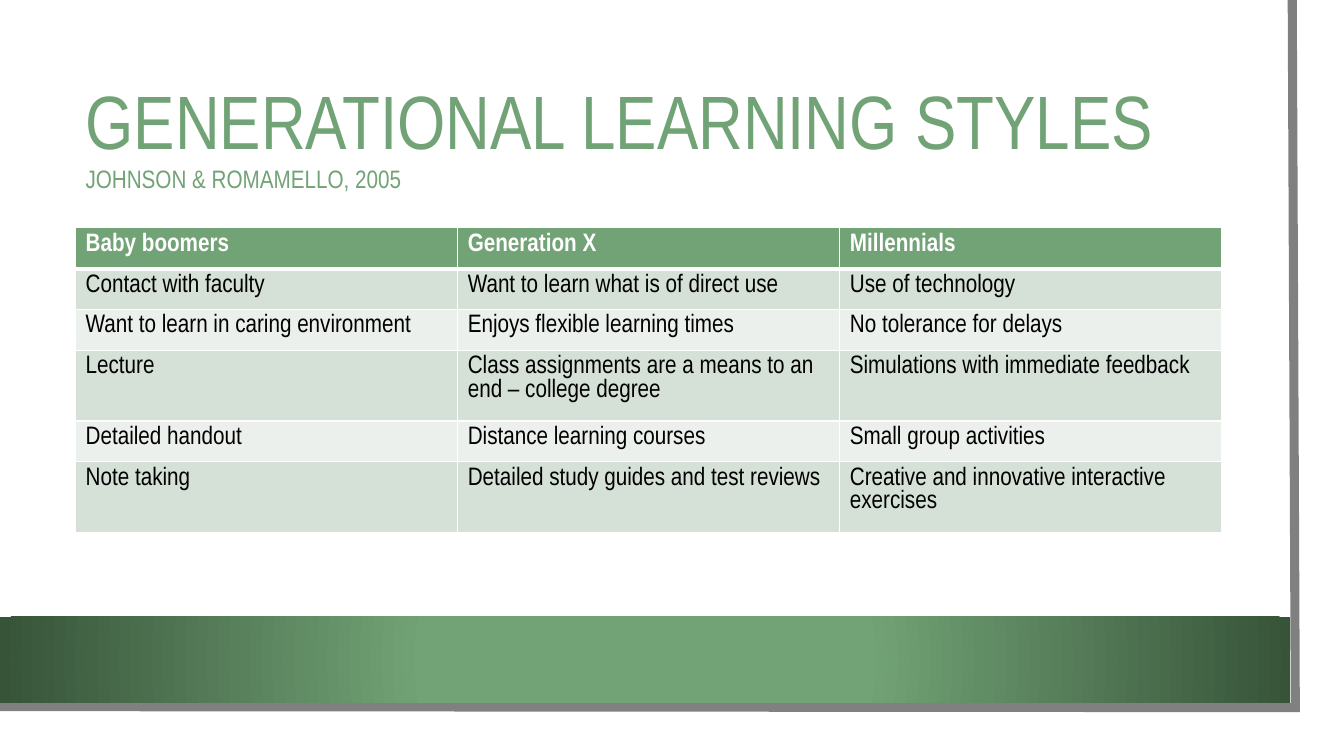
from dataclasses import dataclass

from lxml import etree
from pptx import Presentation
from pptx import util as u
from pptx.dml import color
from pptx.enum import shapes, text
from pptx.oxml import ns, parse_xml

COLUMNS, ROWS = 160, 90


@dataclass(frozen=True)
class Theme:
    font: str = "Arial Narrow"
    green: str = "72A376"
    dark_green: str = "375439"
    odd_row: str = "D5E0D6"
    even_row: str = "EBF0EC"
    frame: str = "808080"
    white: str = "FFFFFF"
    black: str = "000000"
    title_size: float = 54
    body_size: float = 18


def rgb(value):
    return color.RGBColor.from_string(value)


def apply_format(target, values):
    for name, value in values.items():
        setattr(target, name, value)


class SlideBuilder:
    def __init__(self, presentation, theme):
        self.theme = theme
        self.slide = presentation.slides.add_slide(presentation.slide_layouts[6])
        self.column = presentation.slide_width / COLUMNS
        self.row = presentation.slide_height / ROWS

    def place(self, *grid):
        """Turn alternating columns and rows into slide lengths."""
        return [u.Emu(round(value * (self.row if index % 2 else self.column)))
                for index, value in enumerate(grid)]

    def style_font(self, font, size, font_color, bold=False):
        apply_format(font, {"name": self.theme.font, "size": u.Pt(size), "bold": bold})
        font.color.rgb = rgb(font_color)

    def outline(self, points, line_color, width):
        start, *others = [self.place(*point) for point in points]
        builder = self.slide.shapes.build_freeform(*start)
        builder.add_line_segments(others, close=False)
        shape = builder.convert_to_shape()
        shape.shadow.inherit = False
        shape.fill.background()
        shape.line.color.rgb = rgb(line_color)
        shape.line.width = u.Pt(width)
        line = shape.element.spPr.find(ns.qn("a:ln"))
        etree.SubElement(line, ns.qn("a:miter"), lim="800000")

    def glow_band(self, grid, stops):
        shape = self.slide.shapes.add_shape(shapes.MSO_SHAPE.RECTANGLE, *self.place(*grid))
        shape.shadow.inherit = False
        shape.line.fill.background()
        shape.fill.gradient()
        for stop, (position, stop_color) in zip(shape.fill.gradient_stops, stops):
            stop.position = position
            stop.color.rgb = rgb(stop_color)
        # Spread the gradient from the centre outwards
        gradient = shape.element.spPr.find(ns.qn("a:gradFill"))
        linear = gradient.find(ns.qn("a:lin"))
        gradient.replace(linear, parse_xml(
            f'<a:path {ns.nsdecls("a")} path="circle">'
            '<a:fillToRect l="50000" t="50000" r="50000" b="50000"/></a:path>'))

    def title(self, grid, lines):
        shape = self.slide.shapes.add_textbox(*self.place(*grid))
        apply_format(shape.text_frame, {
            "word_wrap": True, "vertical_anchor": text.MSO_ANCHOR.MIDDLE})
        paragraph = shape.text_frame.paragraphs[0]
        paragraph.line_spacing = 0.9
        for index, (words, size) in enumerate(lines):
            if index:
                paragraph.add_line_break()
            run = paragraph.add_run()
            run.text = words
            self.style_font(run.font, size, self.theme.green)

    def border(self, cell, widths):
        properties = cell._tc.get_or_add_tcPr()
        for side, width in widths.items():
            properties.append(parse_xml(
                f'<a:ln{side} {ns.nsdecls("a")} w="{u.Pt(width)}"><a:solidFill>'
                f'<a:srgbClr val="{self.theme.white}"/></a:solidFill></a:ln{side}>'))

    def table(self, grid, records):
        theme = self.theme
        table = self.slide.shapes.add_table(
            len(records), len(records[0]), *self.place(*grid)).table
        for row_index, record in enumerate(records):
            header = row_index == 0
            band = theme.odd_row if row_index % 2 else theme.even_row
            for column_index, words in enumerate(record):
                cell = table.cell(row_index, column_index)
                cell.text = words
                self.style_font(cell.text_frame.paragraphs[0].runs[0].font, theme.body_size,
                                theme.white if header else theme.black, header)
                sides = {"L": 1, "R": 1, "T": 1, "B": 3} if header else {"L": 1, "R": 1, "B": 1}
                self.border(cell, sides)
                cell.fill.solid()
                cell.fill.fore_color.rgb = rgb(theme.green if header else band)


LEARNING_STYLES = [
    ("Baby boomers", "Generation X", "Millennials"),
    ("Contact with faculty", "Want to learn what is of direct use", "Use of technology"),
    ("Want to learn in caring environment", "Enjoys flexible learning times",
     "No tolerance for delays"),
    ("Lecture", "Class assignments are a means to an end – college degree",
     "Simulations with immediate feedback"),
    ("Detailed handout", "Distance learning courses", "Small group activities"),
    ("Note taking", "Detailed study guides and test reviews",
     "Creative and innovative interactive exercises"),
]


def main():
    presentation = Presentation()
    apply_format(presentation, {"slide_width": u.Inches(13.33), "slide_height": u.Inches(7.5)})
    theme = Theme()
    builder = SlideBuilder(presentation, theme)

    # Page edge and footer band
    builder.outline([(153.84, 0), (154.2, 84.24), (-0.36, 84.12)], theme.frame, 6.5)
    builder.glow_band((0, 73.44, 153.64, 10.2), [(0.34, theme.green), (1, theme.dark_green)])

    # Heading and comparison table
    builder.title((9, 9, 136.47, 15.12), [
        ("GENERATIONAL LEARNING STYLES", theme.title_size),
        ("JOHNSON & ROMAMELLO, 2005", theme.body_size)])
    row_height = 4.87
    builder.table((9, 27.12, 136.47, row_height * len(LEARNING_STYLES)), LEARNING_STYLES)

    presentation.save("out.pptx")


if __name__ == "__main__":
    main()
